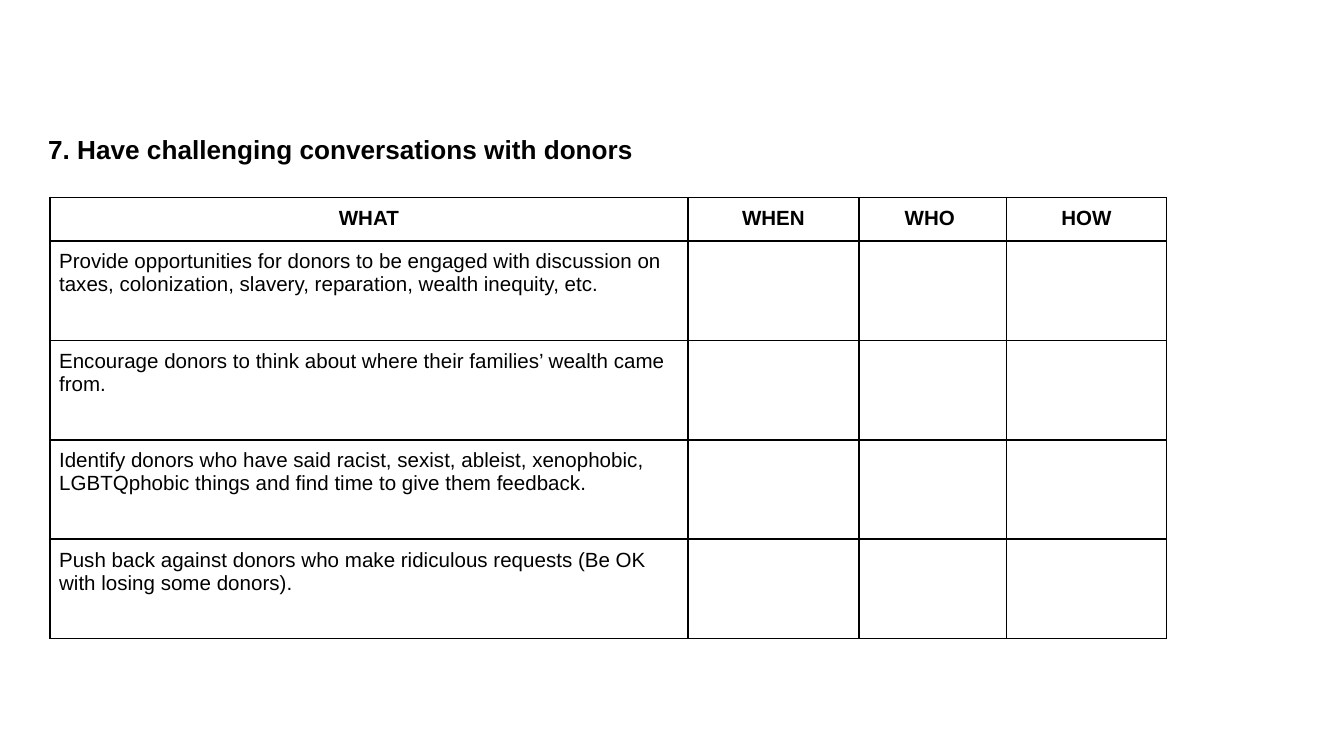
"""Build a slide with a planning table for conversations with donors."""
from dataclasses import dataclass

from lxml.etree import SubElement
from pptx import Presentation
from pptx.dml.color import RGBColor
from pptx.enum.text import PP_ALIGN as Align
from pptx.oxml.ns import qn
from pptx.util import Inches, Pt


@dataclass(frozen=True)
class Theme:
    font: str = "Arial"
    ink: str = "000000"
    title_size: int = 14
    table_size: int = 11
    border_width: int = 1
    cell_margin: float = 0.07


@dataclass(frozen=True)
class Column:
    heading: str
    width: float


THEME = Theme()
COLUMNS = (
    Column("WHAT", 4.75),
    Column("WHEN", 1.27),
    Column("WHO ", 1.1),
    Column("HOW", 1.19),
)
ACTIONS = (
    "Provide opportunities for donors to be engaged with discussion on taxes, "
    "colonization, slavery, reparation, wealth inequity, etc.",
    "Encourage donors to think about where their families’ wealth came from.",
    "Identify donors who have said racist, sexist, ableist, xenophobic, "
    "LGBTQphobic things and find time to give them feedback.",
    "Push back against donors who make ridiculous requests "
    "(Be OK with losing some donors).",
)
PAGE_WIDTH = 10
PAGE_HEIGHT = PAGE_WIDTH * 9 / 16
HEADER_HEIGHT = 0.32
ACTION_HEIGHT = 0.74


def write(frame, text: str, size: int, bold: bool = False, align=Align.LEFT) -> None:
    frame.text = text
    para = frame.paragraphs[0]
    para.alignment = align
    for span in para.runs:
        span.font.name = THEME.font
        span.font.size = Pt(size)
        span.font.bold = bold
        span.font.color.rgb = RGBColor.from_string(THEME.ink)


def style_cell(cell) -> None:
    margin = Inches(THEME.cell_margin)
    cell.margin_left = cell.margin_right = margin
    cell.margin_top = cell.margin_bottom = margin
    properties = cell._tc.get_or_add_tcPr()
    for side in ("a:lnL", "a:lnR", "a:lnT", "a:lnB"):
        line = SubElement(properties, qn(side), w=str(Pt(THEME.border_width)))
        fill = SubElement(line, qn("a:solidFill"))
        SubElement(fill, qn("a:srgbClr"), val=THEME.ink)
    cell.fill.background()


def add_title(slide, text: str) -> None:
    box = slide.shapes.add_textbox(Inches(0.26), Inches(0.94), Inches(5), Inches(0.34))
    box.text_frame.word_wrap = True
    write(box.text_frame, text, THEME.title_size, bold=True)


def add_plan(slide) -> None:
    heights = [HEADER_HEIGHT] + [ACTION_HEIGHT] * len(ACTIONS)
    width = sum(column.width for column in COLUMNS)
    table = slide.shapes.add_table(
        len(heights), len(COLUMNS),
        Inches(0.37), Inches(1.47), Inches(width), Inches(sum(heights)),
    ).table
    table.first_row = table.horz_banding = False
    for row, height in zip(table.rows, heights):
        row.height = Inches(height)
    for cell in table.iter_cells():
        style_cell(cell)
    for index, column in enumerate(COLUMNS):
        table.columns[index].width = Inches(column.width)
        write(table.cell(0, index).text_frame, column.heading,
              THEME.table_size, bold=True, align=Align.CENTER)
    for index, action in enumerate(ACTIONS, start=1):
        write(table.cell(index, 0).text_frame, action, THEME.table_size)


def main() -> None:
    deck = Presentation()
    deck.slide_width, deck.slide_height = Inches(PAGE_WIDTH), Inches(PAGE_HEIGHT)
    page = deck.slides.add_slide(deck.slide_layouts[6])
    add_title(page, "7. Have challenging conversations with donors")
    add_plan(page)
    deck.save("out.pptx")


if __name__ == "__main__":
    main()
